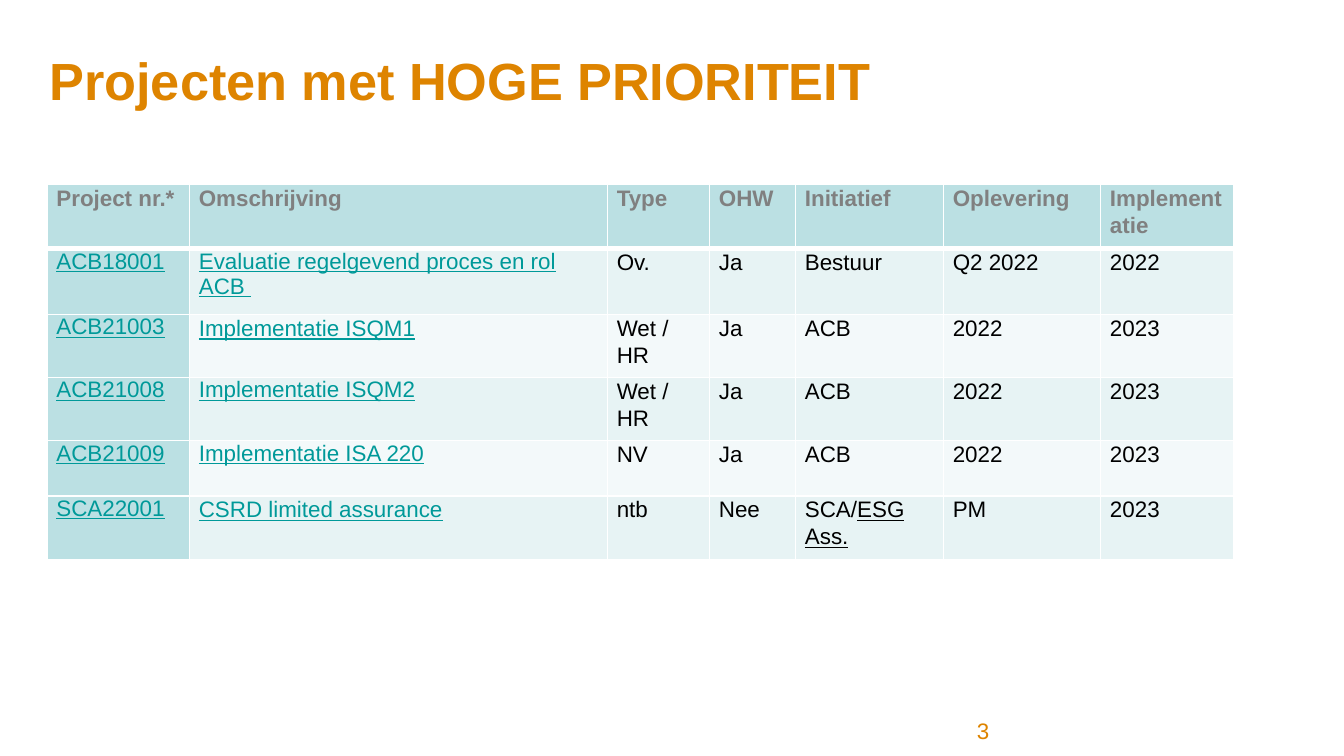
from lxml.etree import SubElement
from pptx import Presentation
from pptx.dml.color import RGBColor as RGB
from pptx.enum.text import MSO_ANCHOR as ANCHOR
from pptx.oxml.ns import qn
from pptx.util import Inches, Pt

ORANGE, TEAL, GREY, BLACK = "DE8400", "009999", "808080", "000000"
HEAD, BANDS = "BBE0E3", ("F3F9FA", "E7F3F4")


def add_run(p, text, size, color, bold=False, underline=False):
    r = p.add_run()
    r.text = text
    r.font.name = "Arial"
    r.font.size = Pt(size)
    r.font.bold = bold
    r.font.underline = underline
    r.font.color.rgb = RGB.from_string(color)


def add_border(cell, side, width):
    ln = SubElement(cell._tc.get_or_add_tcPr(), qn(f"a:{side}"), w=str(Pt(width)))
    SubElement(SubElement(ln, qn("a:solidFill")), qn("a:srgbClr"), val="FFFFFF")


prs = Presentation()
prs.slide_width = Inches(10)
prs.slide_height = Inches(10) * 9 // 16
s = prs.slides.add_slide(prs.slide_layouts[6])

texts = [
    ("Projecten met HOGE PRIORITEIT", (0.27, 0.33, 8.98, 0.52), 28, True, ANCHOR.MIDDLE),
    ("3", (7.17, 5.29, 1.77, 0.22), 12, False, ANCHOR.TOP),
]
for text, box, size, bold, anchor in texts:
    tf = s.shapes.add_textbox(*map(Inches, box)).text_frame
    tf.word_wrap = True
    tf.vertical_anchor = anchor
    add_run(tf.paragraphs[0], text, size, ORANGE, bold)

rows = [
    ["Project nr.*", "Omschrijving", "Type", "OHW", "Initiatief", "Oplevering", "Implementatie"],
    ["ACB18001", "Evaluatie regelgevend proces en rol ACB ", "Ov.", "Ja", "Bestuur", "Q2 2022", "2022"],
    ["ACB21003", "Implementatie ISQM1", "Wet / HR", "Ja", "ACB", "2022", "2023"],
    ["ACB21008", "Implementatie ISQM2", "Wet / HR", "Ja", "ACB", "2022", "2023"],
    ["ACB21009", "Implementatie ISA 220", "NV", "Ja", "ACB", "2022", "2023"],
    ["SCA22001", "CSRD limited assurance", "ntb", "Nee", "SCA/", "PM", "2023"],
]
widths = [1.06, 3.11, 0.76, 0.64, 1.1, 1.17, 0.99]
heights = [0.48, 0.49, 0.47, 0.47, 0.41, 0.48]
single_spaced = {(1, 1), (3, 1), (4, 1)}

table = s.shapes.add_table(len(rows), len(widths), Inches(0.35), Inches(1.37),
                           Inches(sum(widths)), Inches(sum(heights))).table
for col, width in zip(table.columns, widths):
    col.width = Inches(width)
for row, height in zip(table.rows, heights):
    row.height = Inches(height)

for i, row in enumerate(rows):
    for j, text in enumerate(row):
        cell = table.cell(i, j)
        cell.margin_left = cell.margin_right = Inches(0.07)
        cell.margin_top = cell.margin_bottom = 0
        for side in ("lnL", "lnR", "lnT", "lnB"):
            thick = (i, side) in ((0, "lnB"), (1, "lnT"))
            add_border(cell, side, 3 if thick else 1)
        cell.fill.solid()
        cell.fill.fore_color.rgb = RGB.from_string(HEAD if i == 0 or j == 0 else BANDS[i % 2])
        p = cell.text_frame.paragraphs[0]
        if i == 0 or (j > 0 and (i, j) not in single_spaced):
            p.line_spacing = 1.07
        if i == 0:
            add_run(p, text, 12, GREY, bold=True)
        elif j < 2:
            add_run(p, text, 12, TEAL, underline=True)
        else:
            add_run(p, text, 12, BLACK)

add_run(table.cell(5, 4).text_frame.paragraphs[0], "ESG Ass.", 12, BLACK, underline=True)

prs.save("out.pptx")
